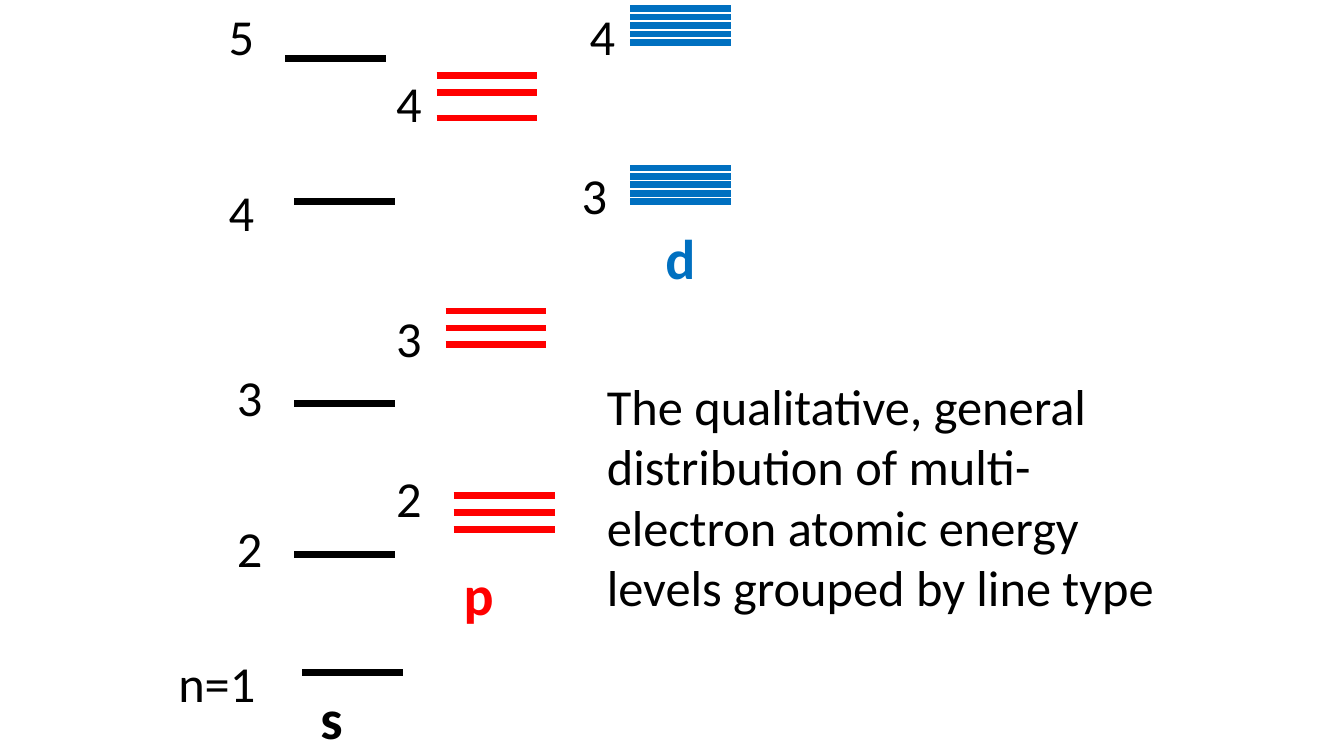
from lxml import etree
from pptx import Presentation
from pptx.dml.color import RGBColor
from pptx.enum.shapes import MSO_CONNECTOR
from pptx.enum.text import MSO_AUTO_SIZE
from pptx.oxml.ns import qn
from pptx.util import Inches, Pt

STRAIGHT = MSO_CONNECTOR.STRAIGHT
GROW = MSO_AUTO_SIZE.SHAPE_TO_FIT_TEXT

BLACK, RED, BLUE = "000000", "FF0000", "0070C0"
LEVEL_WIDTH = 1
P_GAP, D_GAP = 1 / 6, 1 / 12

# Each subshell: left edge, heights of its levels, colour
SUBSHELLS = [
    (3, [6.67], BLACK),
    (2.92, [5.5], BLACK),
    (2.92, [4], BLACK),
    (2.92, [2], BLACK),
    (2.83, [0.58], BLACK),
    (4.5, [5.25 - P_GAP * i for i in range(3)], RED),
    (4.42, [3.42 - P_GAP * i for i in range(3)], RED),
    (4.33, [0.75, 0.92, 1.17], RED),
    (6.25, [2 - D_GAP * i for i in range(5)], BLUE),
    (6.25, [0.42 - D_GAP * i for i in range(5)], BLUE),
]

# Principal quantum numbers: text, left, top
NUMBERS = [
    ("2", 2.25, 5.08), ("3", 2.25, 3.58), ("4", 2.17, 1.75), ("5", 2.17, 0),
    ("2", 3.83, 4.58), ("3", 3.83, 3), ("4", 3.83, 0.67),
    ("3", 5.67, 1.58), ("4", 5.75, 0),
]

# Subshell letters: text, left, top, colour
LETTERS = [("s", 3.08, 6.73, BLACK), ("p", 4.5, 5.5, RED), ("d", 6.5, 2.17, BLUE)]


def rgb(value):
    return RGBColor.from_string(value)


def add_level(page, left, top, color):
    level = page.shapes.add_connector(
        STRAIGHT, Inches(left), Inches(top), Inches(left + LEVEL_WIDTH), Inches(top))
    level.line.color.rgb = rgb(color)
    level.line.width = Pt(4.75)
    properties = level._element.find(qn("p:spPr"))
    etree.SubElement(properties, qn("a:effectLst"))


def add_text(page, text, left, top, width, height, size=36, color=BLACK, bold=False):
    box = page.shapes.add_textbox(
        Inches(left), Inches(top), Inches(width), Inches(height))
    frame = box.text_frame
    frame.word_wrap = True
    frame.auto_size = GROW
    span = frame.paragraphs[0].add_run()
    span.text = text
    span.font.name = "Calibri"
    span.font.size = Pt(size)
    span.font.bold = bold
    span.font.color.rgb = rgb(color)


def main():
    deck = Presentation()
    deck.slide_width, deck.slide_height = Inches(13.33), Inches(7.5)
    page = deck.slides.add_slide(deck.slide_layouts[6])

    # Energy levels
    for left, tops, color in SUBSHELLS:
        for top in tops:
            add_level(page, left, top, color)

    # Level numbers
    add_text(page, "n=1", 1.67, 6.42, 1.17, 0.71)
    for text, left, top in NUMBERS:
        add_text(page, text, left, top, 0.42, 0.71)

    # Subshell letters
    for text, left, top, color in LETTERS:
        add_text(page, text, left, top, 0.92, 0.77, size=40, color=color, bold=True)

    # Caption
    add_text(page, "The qualitative, general distribution of multi-electron "
             "atomic energy levels grouped by line type", 5.92, 3.67, 5.75, 2.52)

    deck.save("out.pptx")


if __name__ == "__main__":
    main()
